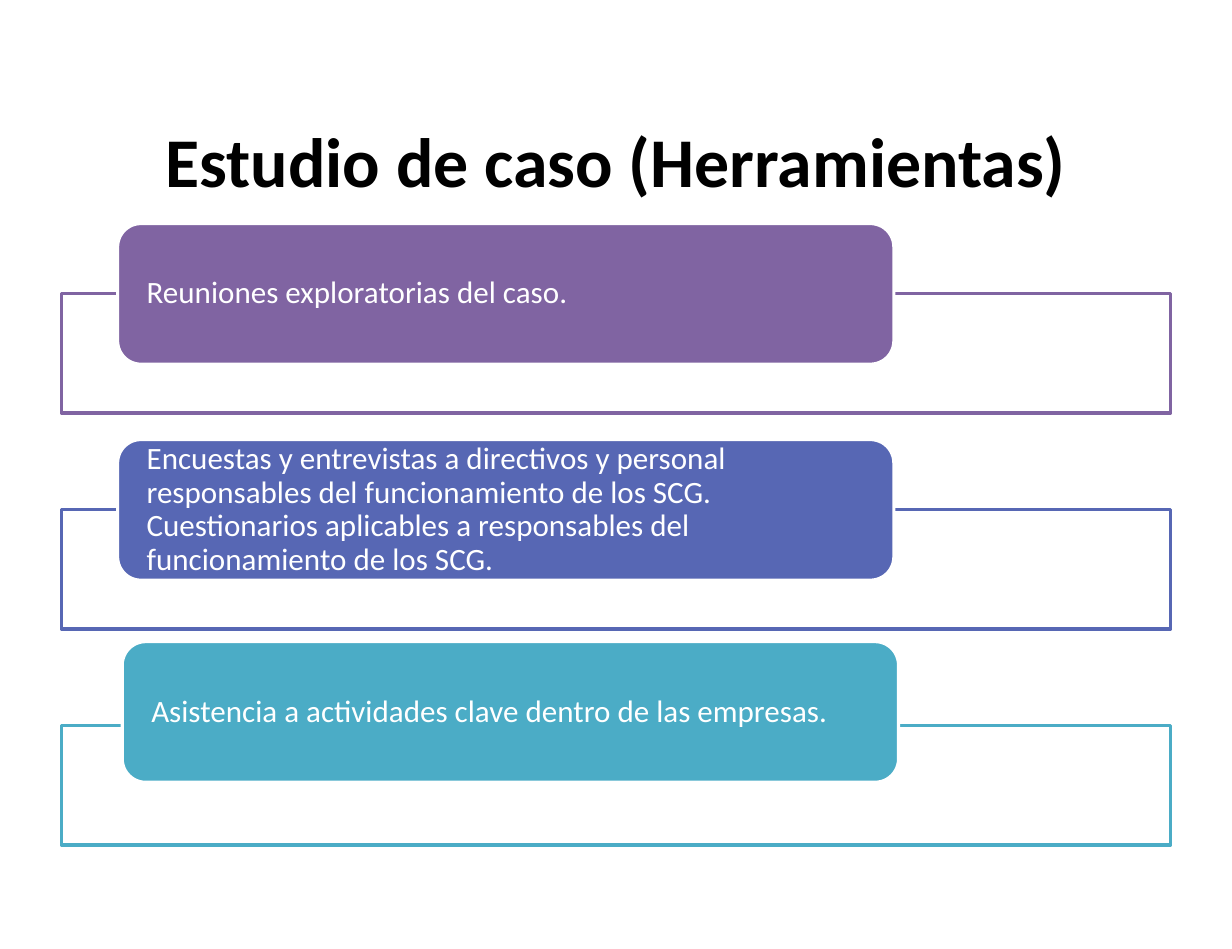
from dataclasses import dataclass

from pptx import Presentation
from pptx.dml.color import RGBColor
from pptx.enum import shapes, text
from pptx.util import Pt

TITLE = "Estudio de caso (Herramientas)"

# Text, colour, and shift of the label (right, down) from its regular place
TOOLS = [
    ("Reuniones exploratorias del caso.", "8064A2", (0, 0)),
    ("Encuestas y entrevistas a directivos y personal responsables del "
     "funcionamiento de los SCG. Cuestionarios aplicables a responsables del "
     "funcionamiento de los SCG.", "5767B4", (0, 0)),
    ("Asistencia a actividades clave dentro de las empresas.", "4BACC6", (3, -9)),
]


@dataclass(frozen=True)
class Theme:
    font: str = "Calibri"
    title_size: float = 45
    label_size: float = 20
    line_width: float = 2
    black: str = "000000"
    white: str = "FFFFFF"


THEME = Theme()
SLIDE_WIDTH, SLIDE_HEIGHT = 794.16, 612
MARGIN, CONTENT_WIDTH = 39.6, 715
TITLE_TOP, TITLE_HEIGHT = 51.84, 102.24
FRAME_TOP, FRAME_HEIGHT, FRAME_STEP = 189.4, 77, 139.3
LABEL_INDENT, LABEL_RISE = 36.2, 45.2
LABEL_WIDTH, LABEL_HEIGHT = 500.4, 90.7
LABEL_INSET = 14.3  # the rounded corners add a little more


def write(shape, content, *, size, color, bold=False, align=text.PP_ALIGN.LEFT,
          insets=(0, 0), line_spacing=None):
    """Fill a shape with one paragraph; insets are (sides, top and bottom)."""
    frame = shape.text_frame
    frame.word_wrap = True
    frame.vertical_anchor = text.MSO_ANCHOR.MIDDLE
    frame.margin_left = frame.margin_right = Pt(insets[0])
    frame.margin_top = frame.margin_bottom = Pt(insets[1])
    paragraph = frame.paragraphs[0]
    paragraph.alignment = align
    paragraph.line_spacing = line_spacing
    run = paragraph.add_run()
    run.text = content
    run.font.name = THEME.font
    run.font.size = Pt(size)
    run.font.bold = bold
    run.font.color.rgb = RGBColor.from_string(color)


def add_box(slide, kind, left, top, width, height, fill, line):
    shape = slide.shapes.add_shape(kind, Pt(left), Pt(top), Pt(width), Pt(height))
    shape.shadow.inherit = False
    shape.fill.solid()
    shape.fill.fore_color.rgb = RGBColor.from_string(fill)
    shape.line.color.rgb = RGBColor.from_string(line)
    shape.line.width = Pt(THEME.line_width)
    return shape


def add_tool(slide, row, content, color, shift):
    top = FRAME_TOP + row * FRAME_STEP
    add_box(slide, shapes.MSO_SHAPE.RECTANGLE, MARGIN, top,
            CONTENT_WIDTH, FRAME_HEIGHT, THEME.white, color)
    label = add_box(slide, shapes.MSO_SHAPE.ROUNDED_RECTANGLE,
                    MARGIN + LABEL_INDENT + shift[0], top - LABEL_RISE + shift[1],
                    LABEL_WIDTH, LABEL_HEIGHT, color, THEME.white)
    write(label, content, size=THEME.label_size, color=THEME.white,
          insets=(LABEL_INSET, 0), line_spacing=0.9)


def main():
    presentation = Presentation()
    presentation.slide_width = Pt(SLIDE_WIDTH)
    presentation.slide_height = Pt(SLIDE_HEIGHT)
    slide = presentation.slides.add_slide(presentation.slide_layouts[6])

    title = slide.shapes.add_textbox(Pt(MARGIN), Pt(TITLE_TOP),
                                     Pt(CONTENT_WIDTH), Pt(TITLE_HEIGHT))
    write(title, TITLE, size=THEME.title_size, color=THEME.black, bold=True,
          align=text.PP_ALIGN.CENTER, insets=(8, 4))
    for row, tool in enumerate(TOOLS):
        add_tool(slide, row, *tool)

    presentation.save("out.pptx")


if __name__ == "__main__":
    main()
